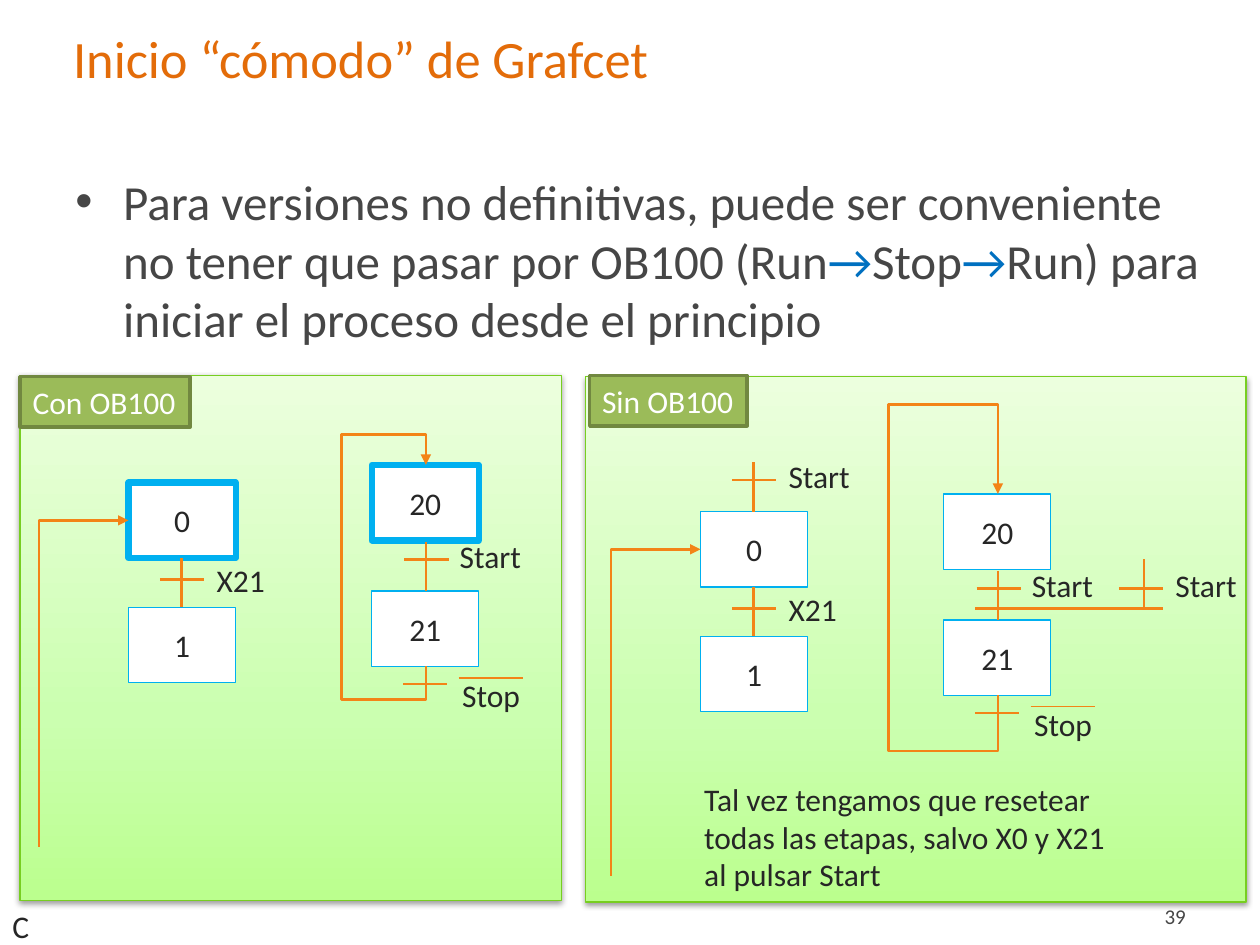
import copy

import pptx
import pptx.dml.color
import pptx.enum.shapes
import pptx.enum.text
import pptx.oxml
import pptx.oxml.ns
import pptx.util
from lxml import etree
from pptx.util import Inches

COLORS = {
    "title": "E36C09", "body": "464646", "label": "262626", "arrow": "0070C0",
    "link": "F38417", "step": "00B0F0", "white": "FFFFFF",
    "tag": "9BBB59", "tag_line": "718840", "panel_line": "77CE21",
}
PANEL_STOPS = [(0, "BBFF8E"), (0.35, "CBFFB0"), (1, "ECFFDE")]
RGB = {name: pptx.dml.color.RGBColor.from_string(value) for name, value in COLORS.items()}
FONT = "Calibri"
ALIGN = pptx.enum.text.PP_ALIGN
ANCHOR = pptx.enum.text.MSO_ANCHOR
RECTANGLE = pptx.enum.shapes.MSO_SHAPE.RECTANGLE
qn = pptx.oxml.ns.qn

prs = pptx.Presentation()
prs.slide_width, prs.slide_height = Inches(10), Inches(7.5)
slide = prs.slides.add_slide(prs.slide_layouts[5])
shapes = slide.shapes


def write(shape, text, size=18, color="label", align=ALIGN.LEFT, anchor=ANCHOR.TOP, wrap=False):
    frame = shape.text_frame
    frame.word_wrap = wrap
    frame.vertical_anchor = anchor
    paragraph = frame.paragraphs[0]
    paragraph.text = text
    paragraph.alignment = align
    paragraph.font.name = FONT
    paragraph.font.size = pptx.util.Pt(size)
    paragraph.font.color.rgb = RGB[color]


def draw_link(points, width=1.5, arrow=False):
    corners = [(Inches(x), Inches(y)) for x, y in points]
    if len(corners) == 2:
        link = shapes.add_connector(pptx.enum.shapes.MSO_CONNECTOR.STRAIGHT, *corners[0], *corners[1])
    else:
        builder = shapes.build_freeform(*corners[0], scale=1.0)
        builder.add_line_segments(corners[1:], close=False)
        link = builder.convert_to_shape()
        link.fill.background()
    link.line.color.rgb = RGB["link"]
    link.line.width = pptx.util.Pt(width)
    if arrow:
        etree.SubElement(link.line._get_or_add_ln(), qn("a:tailEnd"), type="triangle")
    etree.SubElement(link._element.spPr, qn("a:effectLst"))


# Green panels
for left, top, width in [(4.65, 2.99, 5.24), (0.16, 2.98, 4.3)]:
    panel = shapes.add_shape(RECTANGLE, Inches(left), Inches(top), Inches(width), Inches(4.17))
    panel.fill.gradient()
    panel.fill.gradient_angle = 90
    stop_list = panel._element.spPr.find(".//" + qn("a:gsLst"))
    stop_list.insert(1, copy.deepcopy(stop_list[0]))
    for stop, (position, color) in zip(panel.fill.gradient_stops, PANEL_STOPS):
        stop.position = position
        stop.color.rgb = pptx.dml.color.RGBColor.from_string(color)
    panel.line.color.rgb = RGB["panel_line"]
    panel.line.width = pptx.util.Pt(0.75)
    panel.shadow.inherit = False
    panel._element.spPr.find(qn("a:effectLst")).append(pptx.oxml.parse_xml(
        f'<a:outerShdw {pptx.oxml.ns.nsdecls("a")} blurRad="40000" dist="20000" dir="5400000"'
        ' rotWithShape="0"><a:srgbClr val="000000"><a:alpha val="38000"/></a:srgbClr></a:outerShdw>'))

# Title
title = shapes.title
title.left, title.top, title.width, title.height = Inches(0.48), Inches(0.08), Inches(9.19), Inches(0.75)
write(title, "Inicio “cómodo” de Grafcet", 30, "title", anchor=ANCHOR.MIDDLE, wrap=True)

# Bullet
advice = shapes.add_textbox(Inches(0.5), Inches(1.31), Inches(9.17), Inches(1.95))
advice.text_frame.word_wrap = True
paragraph = advice.text_frame.paragraphs[0]
properties = paragraph._p.get_or_add_pPr()
properties.set("marL", str(Inches(0.38)))
properties.set("indent", str(-Inches(0.38)))
bullet_color = etree.SubElement(properties, qn("a:buClr"))
etree.SubElement(bullet_color, qn("a:srgbClr"), val=COLORS["body"])
etree.SubElement(properties, qn("a:buFont"), typeface="Arial")
etree.SubElement(properties, qn("a:buChar"), char="•")
paragraph.font.name = FONT
paragraph.font.size = pptx.util.Pt(28)
for text in ["Para versiones no definitivas, puede ser conveniente no tener que pasar por OB100 (Run",
             "→", "Stop", "→", "Run) para iniciar el proceso desde el principio"]:
    run = paragraph.add_run()
    run.text = text
    run.font.color.rgb = RGB["arrow" if text == "→" else "body"]

# Grafcets: the right one is the left one shifted
STEPS = [("0", 1.02, 3.83), ("1", 1.02, 4.82), ("20", 2.95, 3.69), ("21", 2.95, 4.69)]
diagrams = [
    (0, 0, {"0", "20"}, (2.71, 3.45, 5.55)),
    (4.54, 0.23, set(), (7.05, 3.21, 5.96)),
]
labels = []
for dx, dy, initial_steps, (loop_left, loop_top, loop_bottom) in diagrams:
    for name, x, y in STEPS:
        step = shapes.add_shape(RECTANGLE, Inches(x + dx), Inches(y + dy), Inches(0.85), Inches(0.6))
        step.shadow.inherit = False
        step.fill.solid()
        step.fill.fore_color.rgb = RGB["white"]
        step.line.color.rgb = RGB["step"]
        step.line.width = pptx.util.Pt(3.5 if name in initial_steps else 0.75)
        write(step, name, align=ALIGN.CENTER, anchor=ANCHOR.MIDDLE, wrap=True)

    # Transitions between steps
    for x, y, tick in [(1.44, 4.43, 4.6), (3.38, 4.3, 4.44)]:
        draw_link([(x + dx, y + dy), (x + dx, y + dy + 0.39)])
        draw_link([(x + dx - 0.17, tick + dy), (x + dx + 0.18, tick + dy)])
    draw_link([(3.2 + dx, 5.43 + dy), (3.55 + dx, 5.43 + dy)])
    draw_link([(3.64 + dx, 5.38 + dy), (4.15 + dx, 5.38 + dy)], 0.75)
    labels += [("X21", 1.62 + dx, 4.4 + dy, 0.59), ("Start", 3.55 + dx, 4.21 + dy, 0.69),
               ("Stop", 3.57 + dx, 5.32 + dy, 0.67)]

    # Return paths
    axis = 3.38 + dx
    draw_link([(axis, 5.29 + dy), (axis, loop_bottom), (loop_left, loop_bottom),
               (loop_left, loop_top), (axis, loop_top), (axis, 3.69 + dy)], arrow=True)
    draw_link([(0.31 + dx, 6.72 + dy), (0.31 + dx, 4.13 + dy), (1.02 + dx, 4.13 + dy)], arrow=True)

# Extra Start transitions without OB100
for start, end in [((5.98, 4.06), (5.98, 3.67)), ((5.81, 3.81), (6.16, 3.81)),
                   ((7.74, 4.83), (9.23, 4.83)), ((8.88, 4.67), (9.23, 4.67)),
                   ((9.08, 4.83), (9.08, 4.44))]:
    draw_link([start, end])
labels += [("Start", 6.16, 3.58, 0.69), ("Start", 9.23, 4.44, 0.69), ("C", 0, 7.15, 0.34)]

# Labels
for text, left, top, width in labels:
    label = shapes.add_textbox(Inches(left), Inches(top), Inches(width), Inches(0.4))
    write(label, text)

# Panel tags
for text, left, top, width in [("Sin OB100", 4.68, 2.98, 1.25), ("Con OB100", 0.16, 2.99, 1.35)]:
    tag = shapes.add_shape(RECTANGLE, Inches(left), Inches(top), Inches(width), Inches(0.4))
    tag.shadow.inherit = False
    tag.fill.solid()
    tag.fill.fore_color.rgb = RGB["tag"]
    tag.line.color.rgb = RGB["tag_line"]
    tag.line.width = pptx.util.Pt(2)
    write(tag, text, color="white")

# Closing note and page number
note = shapes.add_textbox(Inches(5.49), Inches(6.14), Inches(3.51), Inches(1.01))
write(note, "Tal vez tengamos que resetear todas las etapas, salvo X0 y X21 al pulsar Start", wrap=True)
page_number = shapes.add_textbox(Inches(7.18), Inches(7.07), Inches(2.33), Inches(0.4))
write(page_number, "39", 12, "body", ALIGN.RIGHT, ANCHOR.MIDDLE, wrap=True)

prs.save("out.pptx")
